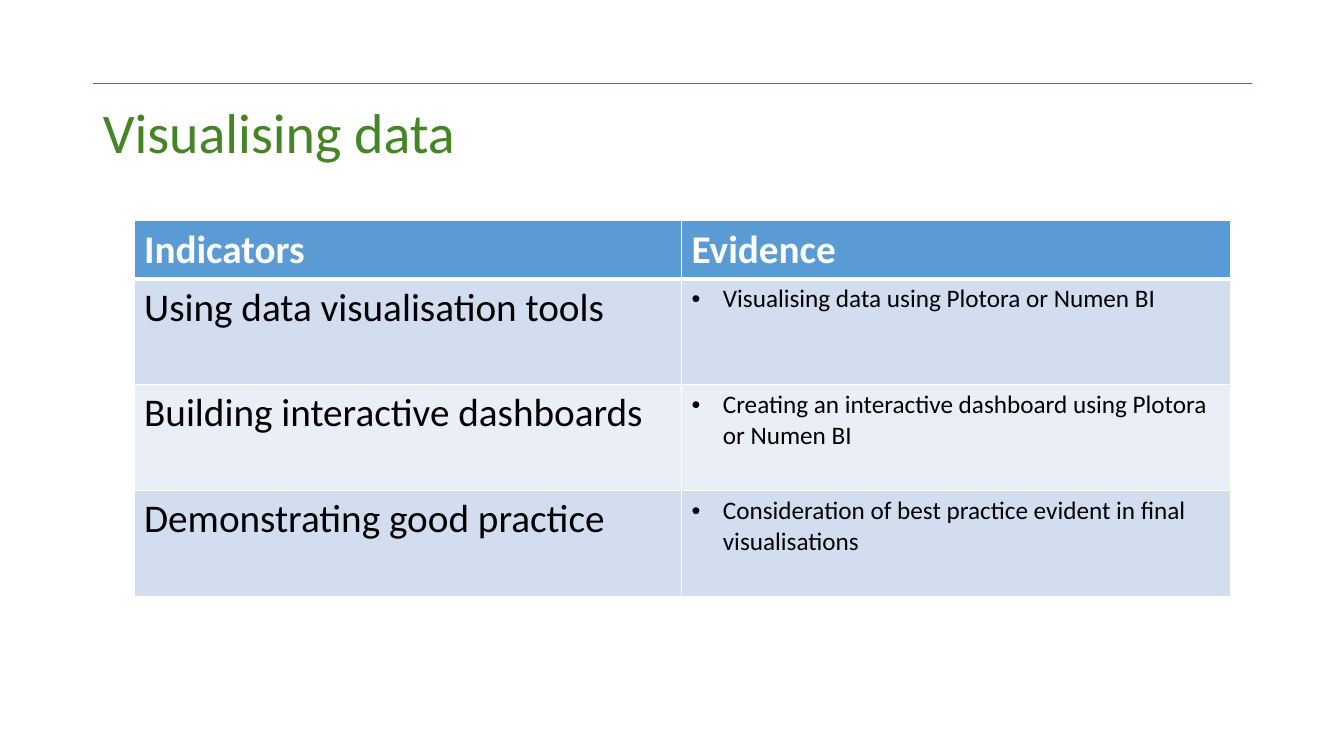
"""Build the slide on visualising data, with its table of indicators and evidence."""
import dataclasses
import typing

import lxml.etree
import pptx
import pptx.dml.color
import pptx.enum.shapes
import pptx.enum.text
import pptx.oxml.ns
import pptx.slide
import pptx.table
import pptx.text.text
import pptx.util

SCALE = 9144


@dataclasses.dataclass(frozen=True)
class Theme:
    font: str = "Calibri"
    green: str = "458525"
    blue: str = "5B9BD5"
    white: str = "FFFFFF"
    black: str = "000000"
    bands: tuple[str, str] = ("D2DEEF", "EAEFF7")
    title: int = 40
    head: int = 28
    note: int = 18


@dataclasses.dataclass(frozen=True)
class Row:
    label: str
    proof: str


THEME = Theme()
HEAD = Row("Indicators", "Evidence")
ROWS = [
    Row("Using data visualisation tools", "Visualising data using Plotora or Numen BI"),
    Row("Building interactive dashboards", "Creating an interactive dashboard using Plotora or Numen BI"),
    Row("Demonstrating good practice", "Consideration of best practice evident in final visualisations"),
]


def px(count: int) -> pptx.util.Emu:
    return pptx.util.Emu(count * SCALE)


def paint(code: str) -> pptx.dml.color.RGBColor:
    return pptx.dml.color.RGBColor.from_string(code)


def add_node(parent: typing.Any, tag: str, **attrs: str) -> typing.Any:
    return lxml.etree.SubElement(parent, pptx.oxml.ns.qn(tag), attrs)


def add_run(para: pptx.text.text._Paragraph, text: str, size: int, tint: str, bold: bool = False) -> None:
    run = para.add_run()
    run.text = text
    run.font.name = THEME.font
    run.font.size = pptx.util.Pt(size)
    run.font.bold = bold
    run.font.color.rgb = paint(tint)


def add_edge(cell: pptx.table._Cell, side: str, width: int) -> None:
    line = add_node(cell._tc.get_or_add_tcPr(), f"a:ln{side}", w=str(pptx.util.Pt(width)))
    add_node(add_node(line, "a:solidFill"), "a:srgbClr", val=THEME.white)


def fill_cell(cell: pptx.table._Cell, tint: str, top: int, base: int) -> None:
    for side, width in (("L", 1), ("R", 1), ("T", top), ("B", base)):
        add_edge(cell, side, width)
    cell.fill.solid()
    cell.fill.fore_color.rgb = paint(tint)


def add_mark(para: pptx.text.text._Paragraph) -> None:
    props = para._p.get_or_add_pPr()
    props.set("marL", str(px(31)))
    props.set("indent", str(px(-31)))
    add_node(props, "a:buFont", typeface="Arial")
    add_node(props, "a:buChar", char="•")


def add_title(slide: pptx.slide.Slide) -> None:
    title = slide.shapes.title
    title.left, title.top, title.width, title.height = map(px, (92, 83, 1150, 102))
    frame = title.text_frame
    frame.auto_size = pptx.enum.text.MSO_AUTO_SIZE.NONE
    frame.vertical_anchor = pptx.enum.text.MSO_ANCHOR.MIDDLE
    para = frame.paragraphs[0]
    para.alignment = pptx.enum.text.PP_ALIGN.LEFT
    para.line_spacing = 0.9
    add_run(para, "Visualising data", THEME.title, THEME.green)


def add_rule(slide: pptx.slide.Slide) -> None:
    kind = pptx.enum.shapes.MSO_CONNECTOR.STRAIGHT
    rule = slide.shapes.add_connector(kind, px(92), px(83), px(1242), px(83))
    rule.line.width = pptx.util.Pt(0.5)
    rule.line.color.rgb = paint(THEME.green)
    add_node(rule._element.spPr, "a:effectLst")


def add_grid(slide: pptx.slide.Slide) -> None:
    grid = slide.shapes.add_table(len(ROWS) + 1, 2, px(133), px(219), px(1088), px(371)).table
    grid.first_row = grid.horz_banding = False
    grid.columns[0].width, grid.columns[1].width = px(543), px(545)
    grid.rows[0].height = px(56)
    for cell, text in zip(grid.rows[0].cells, (HEAD.label, HEAD.proof)):
        fill_cell(cell, THEME.blue, 1, 3)
        add_run(cell.text_frame.paragraphs[0], text, THEME.head, THEME.white, True)
    for spot, row in enumerate(ROWS):
        grid.rows[spot + 1].height = px(105)
        left, right = grid.rows[spot + 1].cells
        for cell in (left, right):
            fill_cell(cell, THEME.bands[spot % 2], 1 if spot else 3, 1)
        add_run(left.text_frame.paragraphs[0], row.label, THEME.head, THEME.black)
        para = right.text_frame.paragraphs[0]
        add_mark(para)
        add_run(para, row.proof, THEME.note, THEME.black)


def main() -> None:
    deck = pptx.Presentation()
    deck.slide_width, deck.slide_height = px(1333), px(750)
    slide = deck.slides.add_slide(deck.slide_layouts[5])
    add_rule(slide)
    add_title(slide)
    add_grid(slide)
    deck.save("out.pptx")


if __name__ == "__main__":
    main()
